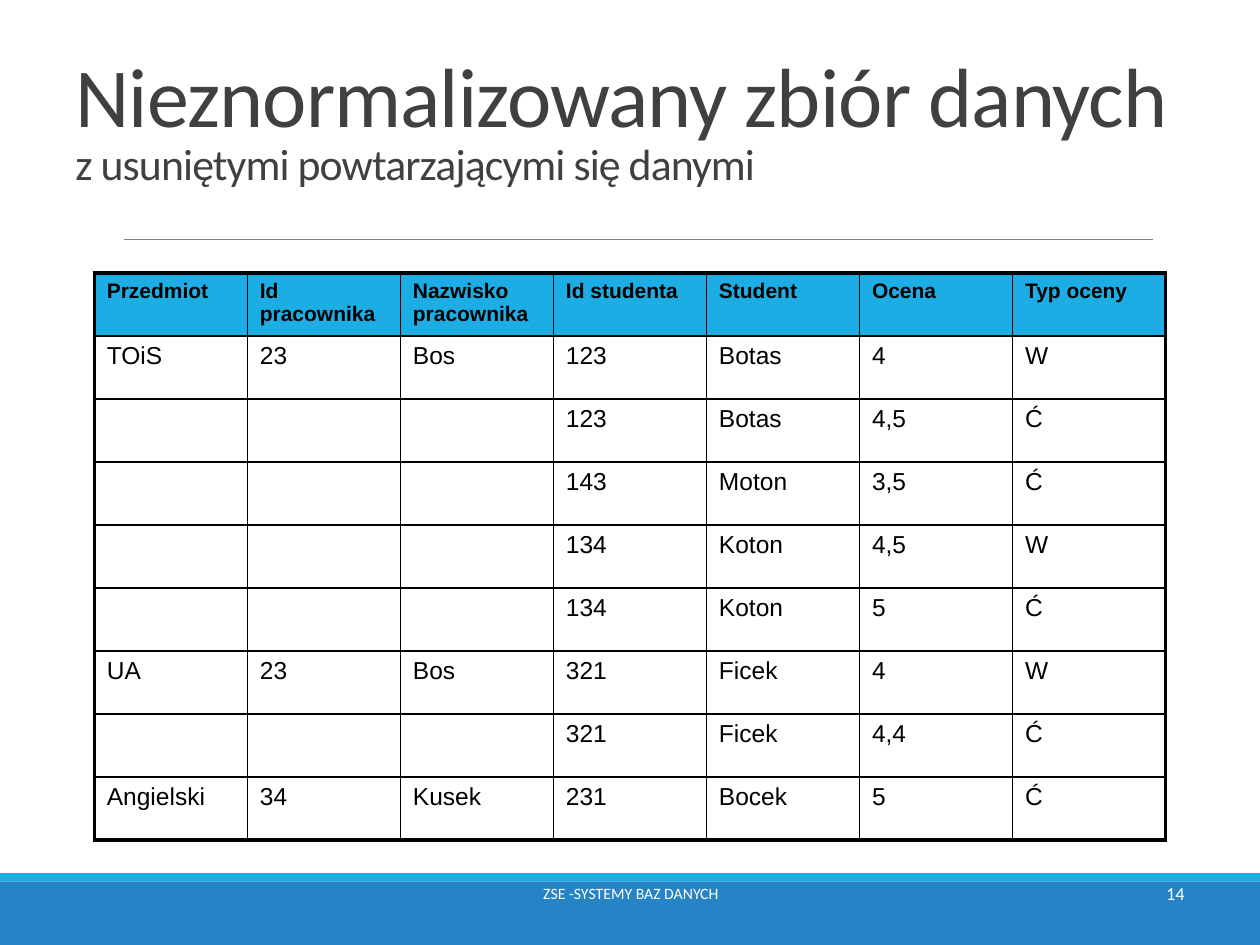
import pptx
import pptx.dml.color
import pptx.enum.shapes
import pptx.enum.text
import pptx.oxml.ns
import pptx.util
import lxml.etree

Cm = pptx.util.Cm
Pt = pptx.util.Pt
Align = pptx.enum.text.PP_ALIGN
Anchor = pptx.enum.text.MSO_ANCHOR

COLORS = {
    "band": "2683C6",
    "accent": "1CADE4",
    "rule": "808080",
    "title": "404040",
    "black": "000000",
    "white": "FFFFFF",
}

GRADES = [
    ["Przedmiot", "Id pracownika", "Nazwisko pracownika", "Id studenta", "Student", "Ocena", "Typ oceny"],
    ["TOiS", "23", "Bos", "123", "Botas", "4", "W"],
    ["", "", "", "123", "Botas", "4,5", "Ć"],
    ["", "", "", "143", "Moton", "3,5", "Ć"],
    ["", "", "", "134", "Koton", "4,5", "W"],
    ["", "", "", "134", "Koton", "5", "Ć"],
    ["UA", "23", "Bos", "321", "Ficek", "4", "W"],
    ["", "", "", "321", "Ficek", "4,4", "Ć"],
    ["Angielski", "34", "Kusek", "231", "Bocek", "5", "Ć"],
]


def rgb(name):
    return pptx.dml.color.RGBColor.from_string(COLORS[name])


def style_font(font, name, size, color, bold=False):
    font.name = name
    font.size = Pt(size)
    font.bold = bold
    font.color.rgb = rgb(color)


def add_bar(slide, left, top, width, height, color):
    bar = slide.shapes.add_shape(
        pptx.enum.shapes.MSO_SHAPE.RECTANGLE, Cm(left), Cm(top), Cm(width), Cm(height))
    bar.shadow.inherit = False
    bar.fill.solid()
    bar.fill.fore_color.rgb = rgb(color)
    bar.line.fill.background()


def add_text_frame(slide, left, top, width, height, anchor):
    box = slide.shapes.add_textbox(Cm(left), Cm(top), Cm(width), Cm(height))
    frame = box.text_frame
    frame.word_wrap = True
    frame.vertical_anchor = anchor
    return frame


def add_footer_text(slide, left, top, width, text, size, alignment):
    frame = add_text_frame(slide, left, top, width, 1.32, Anchor.MIDDLE)
    paragraph = frame.paragraphs[0]
    paragraph.text = text
    paragraph.alignment = alignment
    style_font(paragraph.font, "Calibri", size, "white")


def add_footer(slide, left, top, width, height):
    stripe = 0.17
    add_bar(slide, left, top + stripe, width, height - stripe, "band")
    add_bar(slide, left, top, width, stripe, "accent")
    add_footer_text(slide, left + 18.21, top - 0.25, 5.92, "14", 10.5, Align.RIGHT)
    add_footer_text(slide, left + 8.69, top - 0.25, 8.05, "ZSE -SYSTEMY BAZ DANYCH", 9, Align.CENTER)


def add_rule(slide, left, top, width):
    rule = slide.shapes.add_connector(
        pptx.enum.shapes.MSO_CONNECTOR.STRAIGHT, Cm(left), Cm(top), Cm(left + width), Cm(top))
    rule.line.color.rgb = rgb("rule")
    rule.line.width = Pt(0.5)
    lxml.etree.SubElement(rule._element.spPr, pptx.oxml.ns.qn("a:effectLst"))


def add_title(slide, left, top, width, height):
    frame = add_text_frame(slide, left, top, width, height, Anchor.BOTTOM)
    paragraph = frame.paragraphs[0]
    paragraph.line_spacing = 0.85
    heading = paragraph.add_run()
    heading.text = "Nieznormalizowany zbiór danych"
    paragraph.add_line_break()
    subtitle = paragraph.add_run()
    subtitle.text = "z usuniętymi powtarzającymi się danymi"
    for run, size in ((heading, 48), (subtitle, 25)):
        style_font(run.font, "Calibri", size, "title")
        run.font._element.set("spc", "-50")


def set_border(cell, side, width):
    qn = pptx.oxml.ns.qn
    properties = cell._tc.get_or_add_tcPr()
    line = lxml.etree.SubElement(properties, qn(f"a:ln{side}"), w=str(Pt(width)))
    fill = lxml.etree.SubElement(line, qn("a:solidFill"))
    lxml.etree.SubElement(fill, qn("a:srgbClr"), val=COLORS["black"])


def add_grades_table(slide, left, top, width, height):
    row_count, column_count = len(GRADES), len(GRADES[0])
    table = slide.shapes.add_table(
        row_count, column_count, Cm(left), Cm(top), Cm(width), Cm(height)).table
    table.first_row = False
    table.horz_banding = False
    for row_index, values in enumerate(GRADES):
        is_header = row_index == 0
        for column_index, value in enumerate(values):
            cell = table.cell(row_index, column_index)
            outer_sides = {
                "L": column_index == 0,
                "R": column_index == column_count - 1,
                "T": is_header,
                "B": row_index == row_count - 1,
            }
            for side, is_outer in outer_sides.items():
                set_border(cell, side, 2.25 if is_outer else 1)
            if is_header:
                cell.fill.solid()
                cell.fill.fore_color.rgb = rgb("accent")
            else:
                cell.fill.background()
            paragraph = cell.text_frame.paragraphs[0]
            paragraph.text = value
            style_font(paragraph.font, "Arial", 12 if is_header else 14, "black", is_header)


def main():
    presentation = pptx.Presentation()
    presentation.slide_width = Cm(25.4)
    presentation.slide_height = Cm(19.05)
    slide = presentation.slides.add_slide(presentation.slide_layouts[6])
    add_footer(slide, 0, 17.6, 25.4, 1.45)
    add_rule(slide, 2.49, 4.83, 20.75)
    add_title(slide, 1.27, 0.76, 22.86, 3.18)
    add_grades_table(slide, 1.9, 5.5, 21.6, 11.43)
    presentation.save("out.pptx")


if __name__ == "__main__":
    main()
